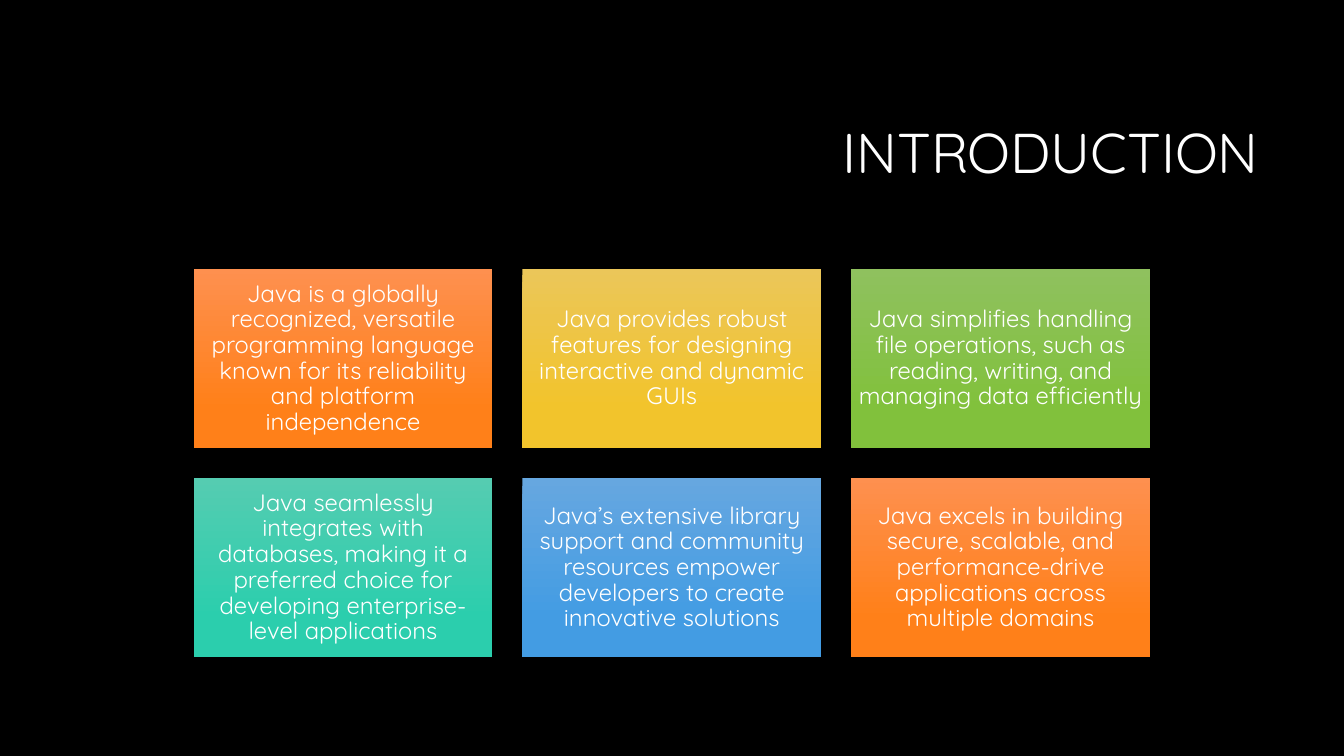
from pptx import Presentation
from pptx.dml.color import RGBColor
from pptx.enum.shapes import MSO_SHAPE
from pptx.enum.text import MSO_ANCHOR, MSO_AUTO_SIZE, PP_ALIGN
from pptx.util import Pt


def color(value):
    return RGBColor.from_string(value)


def write(shape, text, size, alignment, margin):
    frame = shape.text_frame
    frame_format = {
        "word_wrap": True,
        "auto_size": MSO_AUTO_SIZE.NONE,
        "vertical_anchor": MSO_ANCHOR.MIDDLE,
        "margin_left": Pt(margin),
        "margin_right": Pt(margin),
        "margin_top": Pt(min(margin, 5)),
        "margin_bottom": Pt(min(margin, 5)),
    }
    for name, value in frame_format.items():
        setattr(frame, name, value)
    para = frame.paragraphs[0]
    para.alignment = alignment
    para.line_spacing = 0.9
    span = para.add_run()
    span.text = text
    for name, value in {"name": "Quicksand", "size": Pt(size), "bold": False}.items():
        setattr(span.font, name, value)
    span.font.color.rgb = color("FFFFFF")


deck = Presentation()
deck.slide_width = Pt(960)
deck.slide_height = Pt(540)
page = deck.slides.add_slide(deck.slide_layouts[5])
page.background.fill.solid()
page.background.fill.fore_color.rgb = color("000000")

title = page.shapes.title
title_place = {"left": 228.2, "top": 60.5, "width": 678.2, "height": 101.5}
for name, value in title_place.items():
    setattr(title, name, Pt(value))
write(title, "INTRODUCTION", 40, PP_ALIGN.RIGHT, 7.2)

cards = [
    ("Java is a globally recognized, versatile programming language known for its "
     "reliability and platform independence", "FE904F", "FF8019"),
    ("Java provides robust features for designing interactive and dynamic GUIs",
     "EBC659", "F2C42C"),
    ("Java simplifies handling file operations, such as reading, writing, and "
     "managing data efficiently", "8FC15E", "81C13C"),
    ("Java seamlessly integrates with databases, making it a preferred choice for "
     "developing enterprise-level applications", "55CCB1", "2BCEAD"),
    ("Java’s extensive library support and community resources empower developers "
     "to create innovative solutions", "66A7E0", "439CE3"),
    ("Java excels in building secure, scalable, and performance-drive applications "
     "across multiple domains", "FE904F", "FF8019"),
]
columns = 3
card_width, card_height, gap = 213.4, 128, 21.4
grid_left, grid_top = 138.4, 192.2

for index, (text, upper, lower) in enumerate(cards):
    row, column = divmod(index, columns)
    card = page.shapes.add_shape(
        MSO_SHAPE.RECTANGLE,
        Pt(grid_left + column * (card_width + gap)),
        Pt(grid_top + row * (card_height + gap)),
        Pt(card_width),
        Pt(card_height),
    )
    card.shadow.inherit = False
    card.line.fill.background()
    card.fill.gradient()
    card.fill.gradient_angle = 270
    for stop, position, shade in zip(card.fill.gradient_stops, (0, 0.78), (upper, lower)):
        stop.position = position
        stop.color.rgb = color(shade)
    write(card, text, 17, PP_ALIGN.CENTER, 5)

deck.save("out.pptx")
